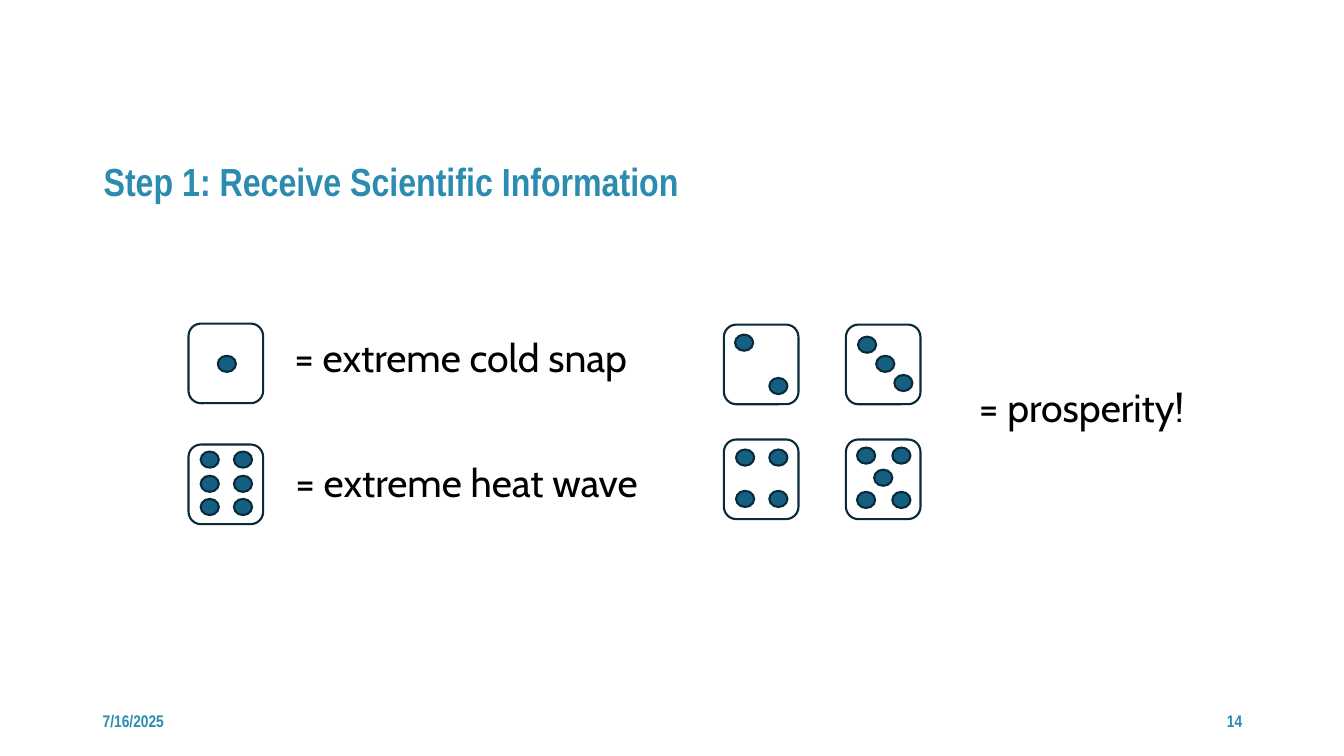
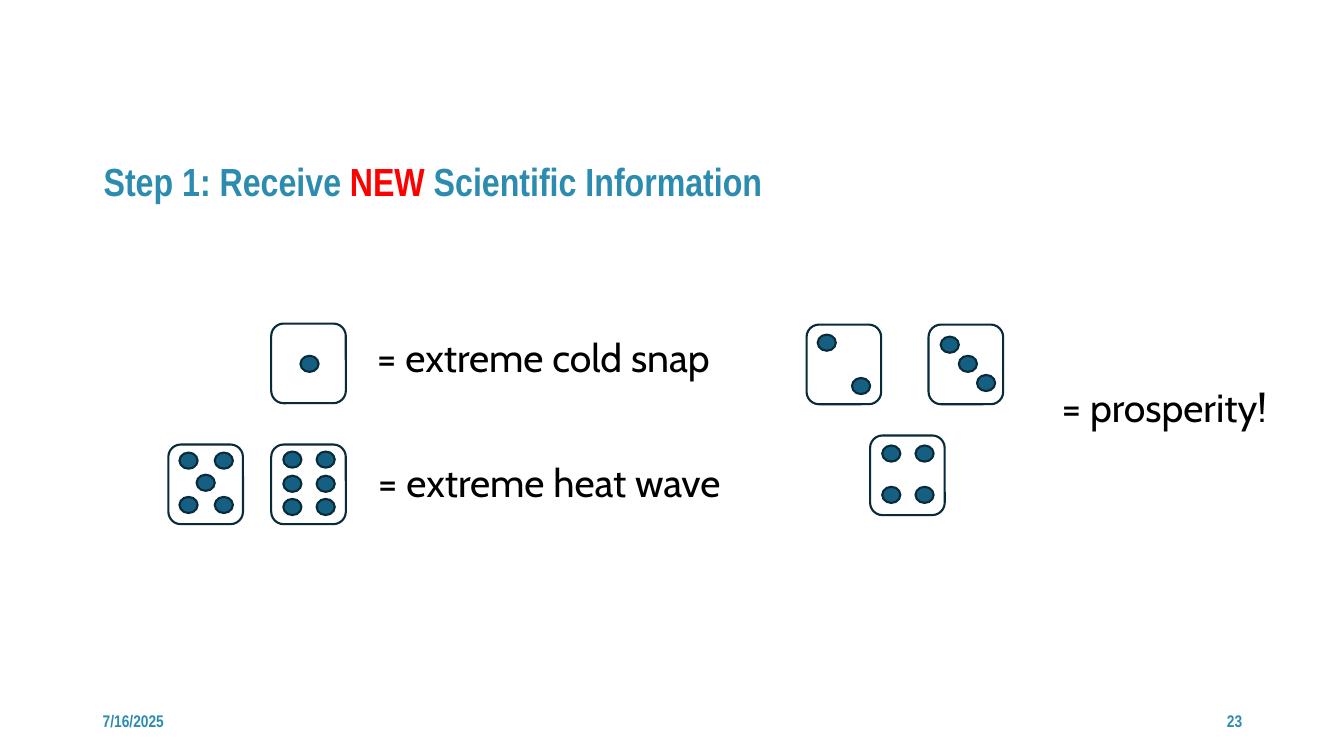
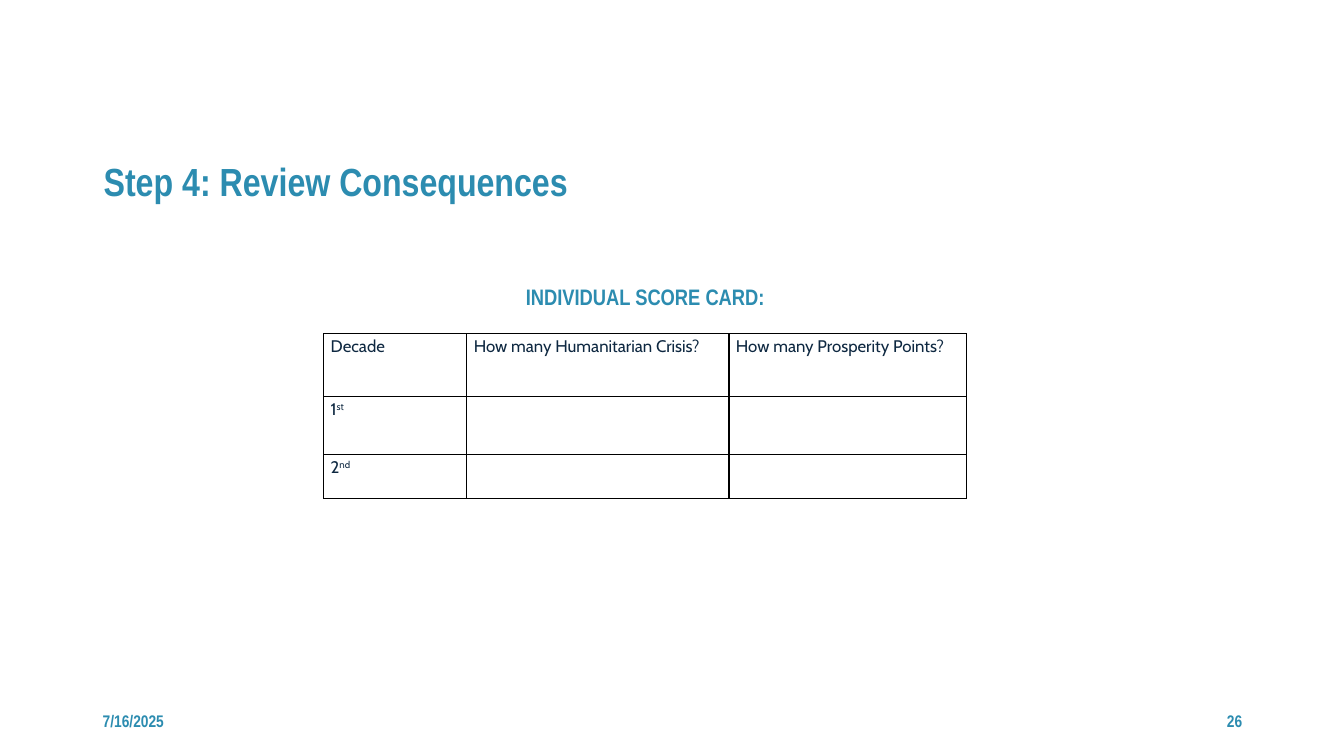
from dataclasses import dataclass
from itertools import product

from lxml import etree
from pptx import Presentation
from pptx.dml.color import RGBColor
from pptx.enum.shapes import MSO_SHAPE
from pptx.enum.text import MSO_ANCHOR, MSO_AUTO_SIZE, PP_ALIGN
from pptx.oxml.ns import qn
from pptx.util import Inches, Pt

ROUND, OVAL = MSO_SHAPE.ROUNDED_RECTANGLE, MSO_SHAPE.OVAL
LEFT, MID, RIGHT = PP_ALIGN.LEFT, PP_ALIGN.CENTER, PP_ALIGN.RIGHT
CENTER, TOP = MSO_ANCHOR.MIDDLE, MSO_ANCHOR.TOP
NONE, GROW = MSO_AUTO_SIZE.NONE, MSO_AUTO_SIZE.SHAPE_TO_FIT_TEXT


@dataclass(frozen=True)
class Theme:
    """Colours, fonts and type sizes of the deck."""
    head: str = "Arial Narrow"
    body: str = "Cabin"
    blue: str = "2C8CB0"
    red: str = "FF0000"
    navy: str = "0E2841"
    black: str = "000000"
    white: str = "FFFFFF"
    pip: str = "156082"
    edge: str = "092A39"
    big: int = 28
    mid: int = 16
    small: int = 12


T = Theme()
TITLE = {"name": T.head, "size": Pt(T.big), "bold": True}
CARD = {**TITLE, "size": Pt(T.mid)}
FOOT = {**TITLE, "size": Pt(T.small)}
LABEL = {"name": T.body, "size": Pt(T.big), "bold": False}
CELL = {**LABEL, "size": Pt(T.small)}

DIE, PIP = (0.74, 0.79), (0.18, 0.16)
PIPS = {
    1: [(0.29, 0.32)],
    2: [(0.11, 0.1), (0.45, 0.53)],
    3: [(0.12 + 0.18 * i, 0.12 + 0.19 * i) for i in range(3)],
    4: list(product((0.12, 0.45), (0.1, 0.51))),
    5: [*product((0.11, 0.46), (0.08, 0.52)), (0.28, 0.3)],
    6: list(product((0.12, 0.45), (0.07, 0.31, 0.54))),
}


def inch(*vals):
    """Turn numbers into lengths."""
    return [Inches(v) for v in vals]


def write(para, runs, style):
    """Add (text, colour, raise) runs to a paragraph."""
    for text, color, lift in runs:
        run = para.add_run()
        run.text = text
        for key, val in style.items():
            setattr(run.font, key, val)
        run.font.color.rgb = RGBColor.from_string(color)
        if lift:
            run.font._element.set("baseline", "30000")


def label(slide, box, runs, style, align=LEFT, anchor=TOP, wrap=True, space=1.0):
    """Place a one-line text box."""
    frame = slide.shapes.add_textbox(*inch(*box)).text_frame
    form = {"word_wrap": wrap, "vertical_anchor": anchor,
            "auto_size": NONE if wrap else GROW}
    for key, val in form.items():
        setattr(frame, key, val)
    para = frame.paragraphs[0]
    para.alignment, para.line_spacing = align, space
    write(para, runs, style)


def shape(group, kind, box, fill):
    """Add an outlined preset shape to a group."""
    item = group.shapes.add_shape(kind, *inch(*box))
    item.shadow.inherit = False
    item.fill.solid()
    item.fill.fore_color.rgb = RGBColor.from_string(fill)
    item.line.color.rgb = RGBColor.from_string(T.edge)
    item.line.width = Pt(1.5)


def die(slide, x, y, face):
    """Draw one die with its top left corner at x, y."""
    group = slide.shapes.add_group_shape()
    shape(group, ROUND, (x, y, *DIE), T.white)
    for dx, dy in PIPS[face]:
        shape(group, OVAL, (x + dx, y + dy, *PIP), T.pip)


def legend(slide, x, y, dice):
    """Draw the dice and their meanings from the corner x, y."""
    for face, (dx, dy) in dice.items():
        die(slide, x + dx, y + dy, face)
    for dx, dy, wide, text in ((0.95, 0.05, 3.61, "= extreme cold snap"),
                               (0.96, 1.29, 3.65, "= extreme heat wave"),
                               (7.74, 0.54, 2.32, "= prosperity!")):
        label(slide, (x + dx, y + dy, wide, 0.57), [(text, T.black, False)],
              LABEL, wrap=False)


def frame(deck, page, title):
    """Add a slide with its title, date and page number."""
    slide = deck.slides.add_slide(deck.slide_layouts[6])
    label(slide, (0.93, 1.56, 11.5, 0.56),
          [(text, color, False) for text, color in title], TITLE, space=0.9)
    for x, text, align in ((0.92, "7/16/2025", LEFT), (9.42, str(page), RIGHT)):
        label(slide, (x, 6.95, 3, 0.4), [(text, T.blue, False)], FOOT, align, CENTER)
    return slide


def border(cell):
    """Give a cell thin black lines on all sides."""
    props = cell._tc.get_or_add_tcPr()
    for side in "LRTB":
        line = etree.SubElement(props, qn(f"a:ln{side}"), w=str(Pt(1)))
        fill = etree.SubElement(line, qn("a:solidFill"))
        etree.SubElement(fill, qn("a:srgbClr"), val=T.black)


def score(slide, x, y):
    """Draw the score card with its heading from the corner x, y."""
    label(slide, (x + 0.97, y - 0.52, 4.44, 0.53),
          [("INDIVIDUAL SCORE CARD:", T.blue, False)], CARD, MID, space=0.9)
    cols, rows = (1.42, 2.6, 2.36), (0.62, 0.58, 0.44)
    table = slide.shapes.add_table(
        len(rows), len(cols), *inch(x, y, sum(cols), sum(rows))).table
    table.first_row = table.horz_banding = False
    for col, wide in zip(table.columns, cols):
        col.width = Inches(wide)
    for row, high in zip(table.rows, rows):
        row.height = Inches(high)
    heads = ("Decade", "How many Humanitarian Crisis?", "How many Prosperity Points?")
    texts = {(0, i): [(text, T.navy, False)] for i, text in enumerate(heads)}
    for i, (num, end) in enumerate((("1", "st"), ("2", "nd")), 1):
        texts[i, 0] = [(num, T.navy, False), (end, T.navy, True)]
    pad = dict(zip(("margin_left", "margin_top", "margin_right", "margin_bottom"),
                   inch(0.07, 0, 0.07, 0)))
    for r, c in product(range(len(rows)), range(len(cols))):
        cell = table.cell(r, c)
        border(cell)
        cell.fill.solid()
        cell.fill.fore_color.rgb = RGBColor.from_string(T.white)
        for key, val in pad.items():
            setattr(cell, key, val)
        para = cell.text_frame.paragraphs[0]
        para.line_spacing, para.space_after = 1.15, Pt(8)
        write(para, texts.get((r, c), []), CELL)


def main():
    """Build and save the deck."""
    deck = Presentation()
    deck.slide_width, deck.slide_height = inch(13.33, 7.5)
    dice = {1: (0, 0), 6: (0, 1.2), 2: (5.31, 0.01), 3: (6.52, 0.01)}
    old = {**dice, 4: (5.31, 1.15), 5: (6.52, 1.15)}
    new = {**dice, 4: (5.94, 1.11), 5: (-1.02, 1.2)}
    legend(frame(deck, 14, [("Step 1: Receive Scientific Information", T.blue)]),
           1.87, 3.21, old)
    legend(frame(deck, 23, [("Step 1: Receive ", T.blue), ("NEW ", T.red),
                            ("Scientific Information", T.blue)]),
           2.69, 3.21, new)
    score(frame(deck, 26, [("Step 4: Review Consequences", T.blue)]), 3.21, 3.31)
    deck.save("out.pptx")


if __name__ == "__main__":
    main()
